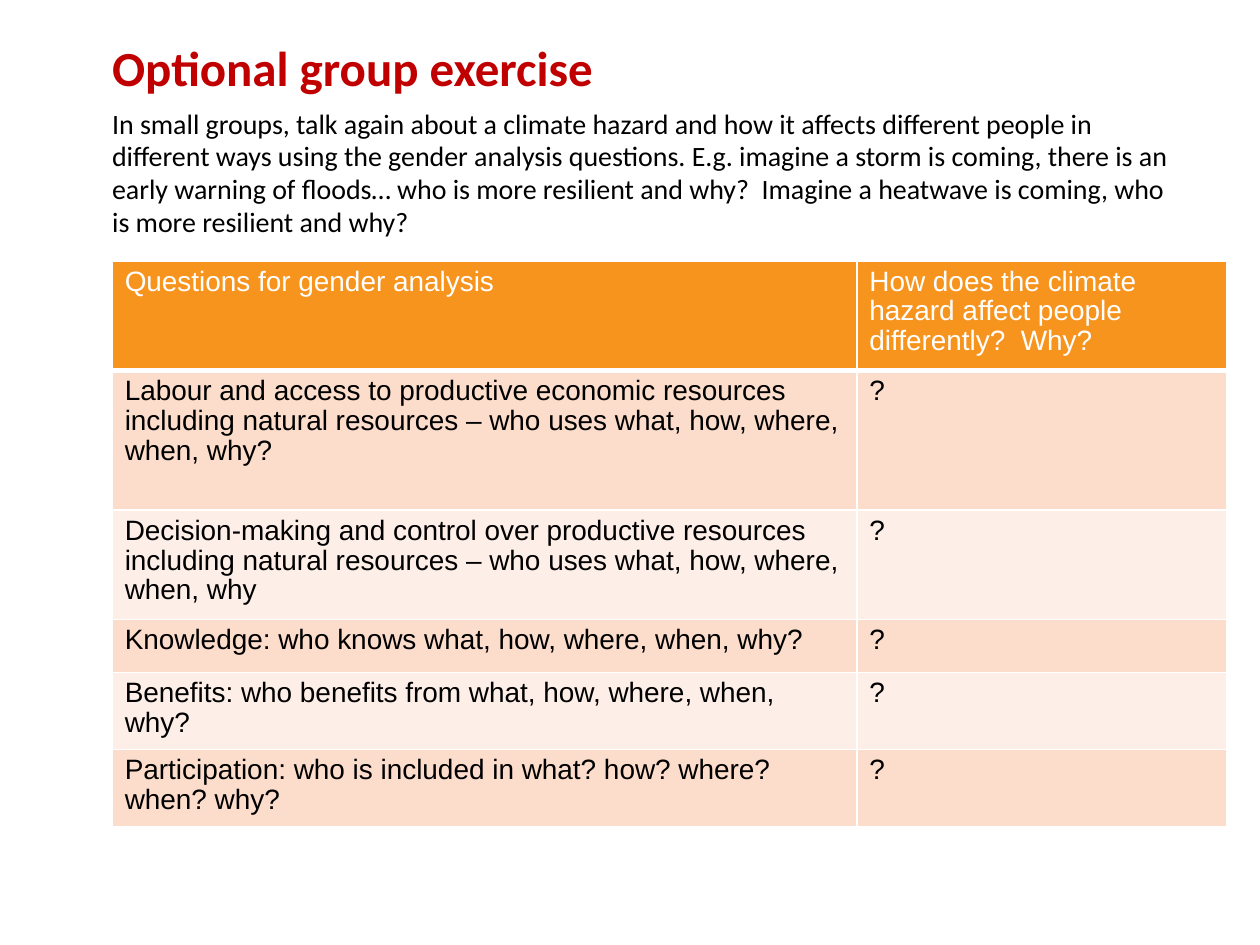
from pptx import Presentation
from pptx.dml.color import RGBColor
from pptx.enum.text import MSO_ANCHOR, PP_ALIGN
from pptx.oxml.ns import qn
from pptx.util import Inches, Pt
from lxml.etree import SubElement as sub

ORANGE, PEACH, PALE = "F7941E", "FCDCCB", "FDEEE7"
WHITE, BLACK, RED = "FFFFFF", "000000", "C00000"
LEFT = 0.89


def color(code):
    return RGBColor.from_string(code)


def write(frame, text, font="Calibri", size=16, ink=BLACK, bold=False, space=1):
    frame.word_wrap = True
    para = frame.paragraphs[0]
    para.alignment = PP_ALIGN.LEFT
    para.line_spacing = space
    run = para.add_run()
    run.text = text
    run.font.name = font
    run.font.size = Pt(size)
    run.font.bold = bold
    run.font.color.rgb = color(ink)


def edge(cell, side, width):
    """Draw a white border; side is L, R, T or B."""
    line = sub(cell.fill._xPr, qn(f"a:ln{side}"), w=str(Pt(width)))
    fill = sub(line, qn("a:solidFill"))
    sub(fill, qn("a:srgbClr"), val=WHITE)


class Deck:
    def __init__(self):
        self.file = Presentation()
        self.file.slide_width = Inches(10)
        self.file.slide_height = Inches(7.5)
        self.slide = self.file.slides.add_slide(self.file.slide_layouts[5])

    def place(self, shape, left, top, width, height):
        shape.left, shape.top = Inches(left), Inches(top)
        shape.width, shape.height = Inches(width), Inches(height)
        frame = shape.text_frame
        frame.margin_left = frame.margin_right = 0
        frame.margin_top = frame.margin_bottom = 0
        frame.vertical_anchor = MSO_ANCHOR.TOP
        return frame

    def title(self, text, *box):
        frame = self.place(self.slide.shapes.title, *box)
        write(frame, text, size=28, ink=RED, bold=True)

    def text(self, text, *box):
        shape = self.slide.shapes.add_textbox(0, 0, 0, 0)
        write(self.place(shape, *box), text, space=0.97)

    def table(self, rows, left, top, widths, heights):
        grid = self.slide.shapes.add_table(
            len(rows), len(widths), Inches(left), Inches(top),
            Inches(sum(widths)), Inches(sum(heights))).table
        for col, width in zip(grid.columns, widths):
            col.width = Inches(width)
        for r, row in enumerate(rows):
            grid.rows[r].height = Inches(heights[r])
            for c, text in enumerate(row):
                self.cell(grid.cell(r, c), text, r)

    def cell(self, cell, text, row):
        head = row == 0
        write(cell.text_frame, text, font="Arial", space=0.96,
              ink=WHITE if head else BLACK)
        cell.margin_left = cell.margin_right = Inches(0.1)
        cell.margin_top = cell.margin_bottom = Inches(0.05)
        for side in "LRTB":
            thick = (head and side == "B") or (row == 1 and side == "T")
            edge(cell, side, 3 if thick else 1)
        cell.fill.solid()
        cell.fill.fore_color.rgb = color(
            ORANGE if head else PEACH if row % 2 else PALE)


def main():
    deck = Deck()
    deck.title("Optional group exercise", LEFT, 0.3, 7.42, 0.5)
    deck.text(
        "In small groups, talk again about a climate hazard and how it affects "
        "different people in different ways using the gender analysis questions. "
        "E.g. imagine a storm is coming, there is an early warning of floods… "
        "who is more resilient and why?  Imagine a heatwave is coming, who is "
        "more resilient and why?", LEFT, 0.86, 8.46, 1.15)
    topics = [
        "Labour and access to productive economic resources including natural "
        "resources – who uses what, how, where, when, why?",
        "Decision-making and control over productive resources including natural "
        "resources – who uses what, how, where, when, why",
        "Knowledge: who knows what, how, where, when, why?",
        "Benefits: who benefits from what, how, where, when, why?",
        "Participation: who is included in what? how? where? when? why?",
    ]
    rows = [("Questions for gender analysis",
             "How does the climate hazard affect people differently?  Why?")]
    rows += [(topic, "?") for topic in topics]
    deck.table(rows, LEFT, 2.07, widths=[5.91, 2.94],
               heights=[0.83, 1.11, 0.83, 0.42, 0.59, 0.59])
    deck.file.save("out.pptx")


if __name__ == "__main__":
    main()
